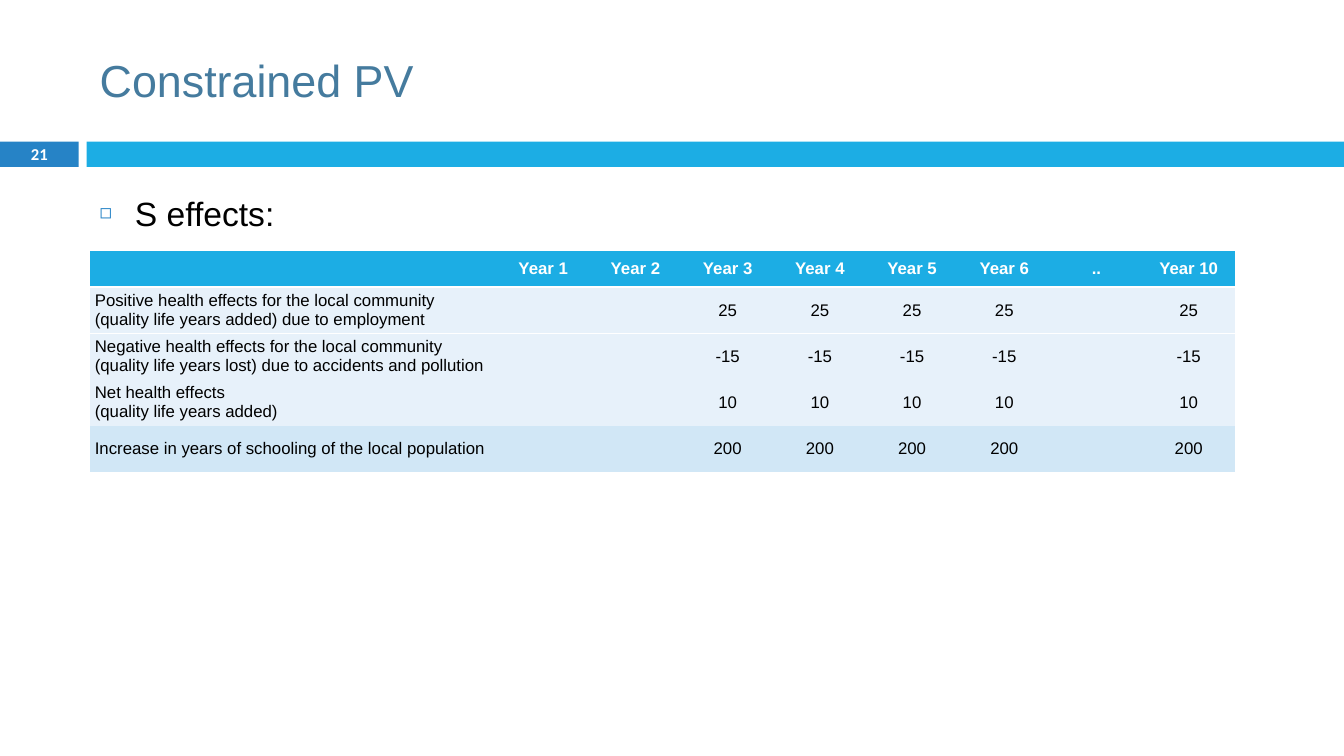
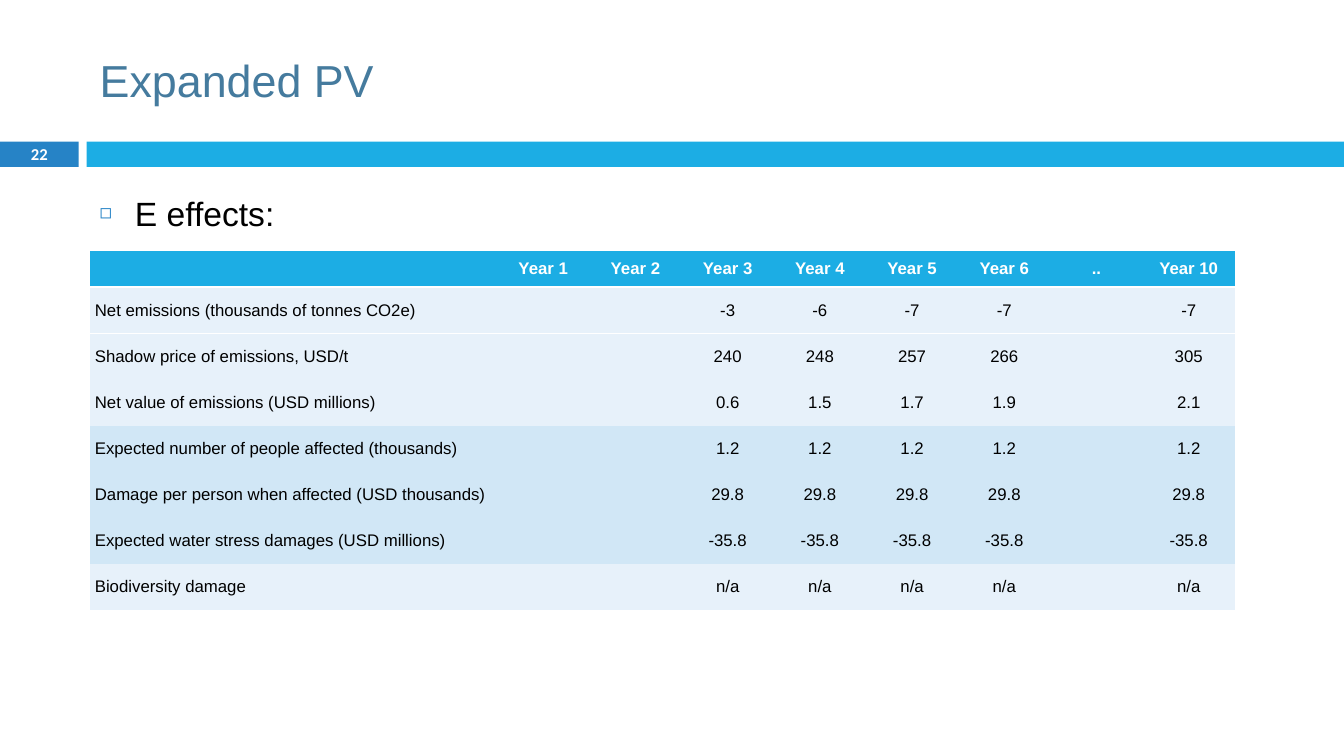
import copy
import dataclasses
import typing

import lxml.etree
import pptx
import pptx.dml.color
import pptx.enum.shapes
import pptx.enum.text
import pptx.oxml.ns
import pptx.util

WIDTH, HEIGHT = pptx.util.Inches(13.33), pptx.util.Inches(7.5)
COLORS = {
    "title": "457B9E", "band": "1CADE4", "badge": "2683C6",
    "pale": "E7F1FA", "deep": "D1E7F6", "white": "FFFFFF", "black": "000000",
}
ALIGN = pptx.enum.text.PP_ALIGN
ANCHOR = pptx.enum.text.MSO_ANCHOR
PLAIN_STYLE = "{2D5ABB26-0587-4C30-8999-92F81FD0307C}"  # no style, no grid


@dataclasses.dataclass(frozen=True)
class Box:
    """A frame in percent of the slide's width and height."""
    left: float
    top: float
    width: float
    height: float

    def frame(self) -> tuple[int, int, int, int]:
        return (across(self.left), down(self.top),
                across(self.width), down(self.height))


@dataclasses.dataclass(frozen=True)
class Row:
    label: str
    values: tuple[str, ...]  # years 3 to 6, then year 10
    tone: str = "pale"

    def cells(self) -> list[str]:
        return [self.label, "", "", *self.values[:4], "", self.values[4]]


@dataclasses.dataclass(frozen=True)
class Page:
    number: int
    title: str
    point: str
    rows: list[Row]


# Shared layout, in percent of the slide
LEFT, MAIN = 6.68, 85.22
TITLE = Box(LEFT, 3.33, 89.2, 14.4)
BADGE = Box(0, 18.75, 5.85, 3.33)
BAND = Box(6.45, BADGE.top, 100 - 6.45, BADGE.height)
BODY = Box(LEFT, 22.13, MAIN, 71.87)
TABLE_TOP, HEAD_ROW, DATA_ROW, LABEL_COL = 33.2, 4.77, 6.11, 30.31
HEADS = ["", *(f"Year {year}" for year in range(1, 7)), "..", "Year 10"]

PAGES = [
    Page(21, "Constrained PV", "S effects:", [
        Row("Positive health effects for the local community \n"
            "(quality life years added) due to employment", ("25",) * 5),
        Row("Negative health effects for the local community \n"
            "(quality life years lost) due to accidents and pollution", ("-15",) * 5),
        Row("Net health effects \n(quality life years added)", ("10",) * 5),
        Row("Increase in years of schooling of the local population",
            ("200",) * 5, "deep"),
    ]),
    Page(22, "Expanded PV", "E effects:", [
        Row("Net emissions (thousands of tonnes CO2e)", ("-3", "-6", "-7", "-7", "-7")),
        Row("Shadow price of emissions, USD/t", ("240", "248", "257", "266", "305")),
        Row("Net value of emissions (USD millions)", ("0.6", "1.5", "1.7", "1.9", "2.1")),
        Row("Expected number of people affected (thousands)", ("1.2",) * 5, "deep"),
        Row("Damage per person when affected (USD thousands)", ("29.8",) * 5, "deep"),
        Row("Expected water stress damages (USD millions)", ("-35.8",) * 5, "deep"),
        Row("Biodiversity damage", ("n/a",) * 5),
    ]),
]


def across(share: float) -> int:
    return round(WIDTH * share / 100)


def down(share: float) -> int:
    return round(HEIGHT * share / 100)


def paint(fill: typing.Any, tone: str) -> None:
    fill.solid()
    fill.fore_color.rgb = pptx.dml.color.RGBColor.from_string(COLORS[tone])


def add_node(parent: typing.Any, tag: str, **values: str) -> typing.Any:
    return lxml.etree.SubElement(parent, pptx.oxml.ns.qn(tag), values)


def write(frame: typing.Any, text: str, *, size: float = 12, font: str = "Arial",
          color: str = "black", bold: bool = False, align: typing.Any = ALIGN.LEFT,
          before: float = 0, after: float = 0, lines: float | None = None) -> typing.Any:
    """Fill a text frame with one paragraph and return it."""
    para = frame.paragraphs[0]
    para.text = text
    para.alignment = align
    para.space_before = pptx.util.Pt(before)
    para.space_after = pptx.util.Pt(after)
    if lines:
        para.line_spacing = lines
    for run in para.runs:
        run.font.size, run.font.name, run.font.bold = pptx.util.Pt(size), font, bold
        paint(run.font.fill, color)
    # Line breaks take the size of the text around them
    for gap in para._p.findall(pptx.oxml.ns.qn("a:br")):
        gap.append(copy.deepcopy(para.runs[0]._r.rPr))
    return para


def add_text(slide: typing.Any, box: Box, text: str,
             anchor: typing.Any = ANCHOR.MIDDLE, **style: typing.Any) -> typing.Any:
    frame = slide.shapes.add_textbox(*box.frame()).text_frame
    frame.word_wrap = True
    frame.vertical_anchor = anchor
    return write(frame, text, **style)


def add_bar(slide: typing.Any, box: Box, tone: str) -> None:
    bar = slide.shapes.add_shape(
        pptx.enum.shapes.MSO_SHAPE.RECTANGLE, *box.frame())
    bar.shadow.inherit = False
    paint(bar.fill, tone)
    bar.line.fill.background()


def add_bullet(para: typing.Any) -> None:
    props = para._p.get_or_add_pPr()
    indent = pptx.util.Inches(0.35)
    props.set("marL", str(indent))
    props.set("indent", str(-indent))
    add_node(add_node(props, "a:buClr"), "a:srgbClr", val=COLORS["badge"])
    add_node(props, "a:buSzPct", val="60000")
    add_node(props, "a:buFont", typeface="Arial")
    add_node(props, "a:buChar", char="◻")


def add_rule(cell: typing.Any, tag: str) -> None:
    """Draw a white edge on one side of a cell."""
    props = cell._tc.get_or_add_tcPr()
    edge = add_node(props, tag, w=str(pptx.util.Pt(1)))
    add_node(add_node(edge, "a:solidFill"), "a:srgbClr", val=COLORS["white"])
    props.insert(0, edge)


def fill_cell(cell: typing.Any, text: str, tone: str, **style: typing.Any) -> None:
    cell.margin_left = cell.margin_right = pptx.util.Inches(0.05)
    cell.margin_top = cell.margin_bottom = 0
    cell.vertical_anchor = ANCHOR.MIDDLE
    paint(cell.fill, tone)
    write(cell.text_frame, text, **style)


def add_grid(slide: typing.Any, rows: list[Row]) -> None:
    box = Box(LEFT, TABLE_TOP, MAIN, HEAD_ROW + DATA_ROW * len(rows))
    grid = slide.shapes.add_table(len(rows) + 1, len(HEADS), *box.frame()).table
    grid.horz_banding = False
    grid._tbl.tblPr.find(pptx.oxml.ns.qn("a:tableStyleId")).text = PLAIN_STYLE

    year_col = (MAIN - LABEL_COL) / (len(HEADS) - 1)
    for at, col in enumerate(grid.columns):
        col.width = across(year_col if at else LABEL_COL)
    for at, line in enumerate(grid.rows):
        line.height = down(DATA_ROW if at else HEAD_ROW)

    # Header
    for at, text in enumerate(HEADS):
        fill_cell(grid.cell(0, at), text, "band", color="white", bold=True,
                  align=ALIGN.CENTER, before=2, after=2)
        add_rule(grid.cell(0, at), "a:lnB")
        add_rule(grid.cell(1, at), "a:lnT")
    # Data
    for down_at, row in enumerate(rows, 1):
        for at, text in enumerate(row.cells()):
            fill_cell(grid.cell(down_at, at), text, row.tone, before=1, after=1,
                      align=ALIGN.CENTER if at else ALIGN.LEFT)


def add_page(deck: typing.Any, page: Page) -> None:
    slide = deck.slides.add_slide(deck.slide_layouts[6])
    # Band and page number
    add_bar(slide, BADGE, "badge")
    add_bar(slide, BAND, "band")
    add_text(slide, BADGE, str(page.number), size=11.9, font="Calibri",
             color="white", bold=True, align=ALIGN.CENTER)
    # Title and point
    add_text(slide, TITLE, page.title, size=32, color="title")
    add_bullet(add_text(slide, BODY, page.point, ANCHOR.TOP,
                        size=24, before=7, lines=1.5))
    add_grid(slide, page.rows)


def main() -> None:
    deck = pptx.Presentation()
    deck.slide_width, deck.slide_height = WIDTH, HEIGHT
    for page in PAGES:
        add_page(deck, page)
    deck.save("out.pptx")


if __name__ == "__main__":
    main()
